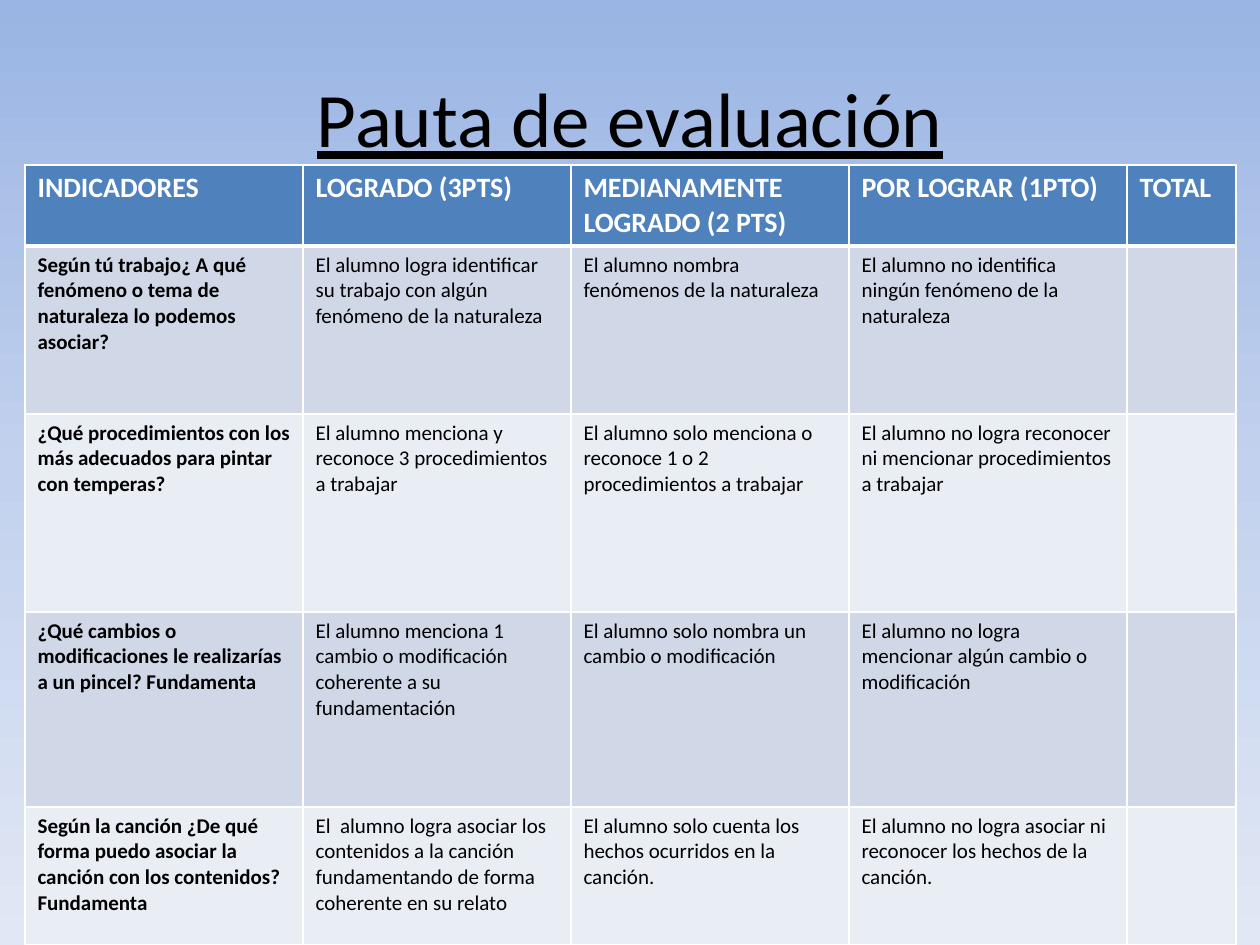
import copy

import lxml.etree
import pptx
import pptx.dml.color
import pptx.enum.text
import pptx.oxml.ns
import pptx.util

# Content
TITLE = "Pauta de evaluación"
HEADINGS = ["INDICADORES", "LOGRADO (3PTS)", "MEDIANAMENTE LOGRADO (2 PTS)",
            "POR LOGRAR (1PTO)", "TOTAL"]
CRITERIA = [
    ["Según tú trabajo¿ A qué fenómeno o tema de naturaleza lo podemos asociar?",
     "El alumno logra identificar su trabajo con algún fenómeno de la naturaleza",
     "El alumno nombra fenómenos de la naturaleza",
     "El alumno no identifica ningún fenómeno de la naturaleza", ""],
    ["¿Qué procedimientos con los más adecuados para pintar con temperas?",
     "El alumno menciona y reconoce 3 procedimientos a trabajar",
     "El alumno solo menciona o reconoce 1 o 2 procedimientos a trabajar",
     "El alumno no logra reconocer ni mencionar procedimientos a trabajar", ""],
    ["¿Qué cambios o modificaciones le realizarías a un pincel? Fundamenta",
     "El alumno menciona 1 cambio o modificación coherente a su fundamentación",
     "El alumno solo nombra un cambio o modificación",
     "El alumno no logra mencionar algún cambio o modificación", ""],
    ["Según la canción ¿De qué forma puedo asociar la canción con los contenidos? Fundamenta",
     "El  alumno logra asociar los contenidos a la canción fundamentando de forma "
     "coherente en su relato",
     "El alumno solo cuenta los hechos ocurridos en la canción.",
     "El alumno no logra asociar ni reconocer los hechos de la canción.", ""],
]

THEME = {
    "font": "Calibri", "title_size": 44, "heading_size": 16, "body_size": 12,
    "ink": "000000", "white": "FFFFFF", "header": "4F81BD",
    "bands": ["D0D8E8", "E9EDF4"],
    "sky": [(0, "9AB5E4"), (0.5, "C2D1ED"), (1, "E1E8F5")],
}

# Layout in px
PX = 914400 // 126
PAGE_SIZE = (1260, 945)
TITLE_BOX = (63, 38, 1134, 157)
TABLE_ORIGIN = (25, 165)
COLUMN_WIDTHS = [278, 268, 278, 278, 109]
ROW_HEIGHTS = [81, 168, 198, 195, 138]


def px(length):
    return pptx.util.Emu(length * PX)


def rgb(value):
    return pptx.dml.color.RGBColor.from_string(value)


def style_font(font, size, color, bold=False):
    font.name = THEME["font"]
    font.size = pptx.util.Pt(size)
    font.color.rgb = rgb(color)
    font.bold = bold


def paint_background(page):
    fill = page.background.fill
    fill.gradient()
    fill.gradient_angle = 270
    stop_list = page.element.find(".//" + pptx.oxml.ns.qn("a:gsLst"))
    stop_list.insert(1, copy.deepcopy(stop_list[0]))
    for stop, (position, color) in zip(fill.gradient_stops, THEME["sky"]):
        stop.position = position
        stop.color.rgb = rgb(color)


def set_borders(cell, widths):
    qn = pptx.oxml.ns.qn
    properties = cell._tc.get_or_add_tcPr()
    for index, (side, points) in enumerate(widths.items()):
        line = lxml.etree.Element(qn("a:ln" + side), w=str(pptx.util.Pt(points)))
        solid = lxml.etree.SubElement(line, qn("a:solidFill"))
        lxml.etree.SubElement(solid, qn("a:srgbClr"), val=THEME["white"])
        properties.insert(index, line)


def add_title(page):
    title = page.shapes.title
    title.left, title.top, title.width, title.height = map(px, TITLE_BOX)
    frame = title.text_frame
    frame.text = TITLE
    frame.vertical_anchor = pptx.enum.text.MSO_ANCHOR.MIDDLE
    frame.paragraphs[0].alignment = pptx.enum.text.PP_ALIGN.CENTER
    font = frame.paragraphs[0].runs[0].font
    style_font(font, THEME["title_size"], THEME["ink"])
    font.underline = True


def add_rubric(page):
    rows = [HEADINGS] + CRITERIA
    left, top = map(px, TABLE_ORIGIN)
    table = page.shapes.add_table(len(rows), len(HEADINGS), left, top,
                                  px(sum(COLUMN_WIDTHS)), px(sum(ROW_HEIGHTS))).table
    for column, width in zip(table.columns, COLUMN_WIDTHS):
        column.width = px(width)
    for row, height in zip(table.rows, ROW_HEIGHTS):
        row.height = px(height)

    for r, texts in enumerate(rows):
        heading = r == 0
        fill = THEME["header"] if heading else THEME["bands"][(r - 1) % 2]
        size = THEME["heading_size"] if heading else THEME["body_size"]
        color = THEME["white"] if heading else THEME["ink"]
        # The rule under the headings is thicker than the rest
        borders = {"L": 1, "R": 1, "T": 3 if r == 1 else 1, "B": 3 if heading else 1}
        for c, text in enumerate(texts):
            cell = table.cell(r, c)
            cell.fill.solid()
            cell.fill.fore_color.rgb = rgb(fill)
            set_borders(cell, borders)
            paragraph = cell.text_frame.paragraphs[0]
            paragraph.text = text
            for target in [paragraph, *paragraph.runs]:
                style_font(target.font, size, color, bold=heading or c == 0)


def main():
    deck = pptx.Presentation()
    deck.slide_width, deck.slide_height = map(px, PAGE_SIZE)
    page = deck.slides.add_slide(deck.slide_layouts[5])
    paint_background(page)
    add_title(page)
    add_rubric(page)
    deck.save("out.pptx")


if __name__ == "__main__":
    main()
